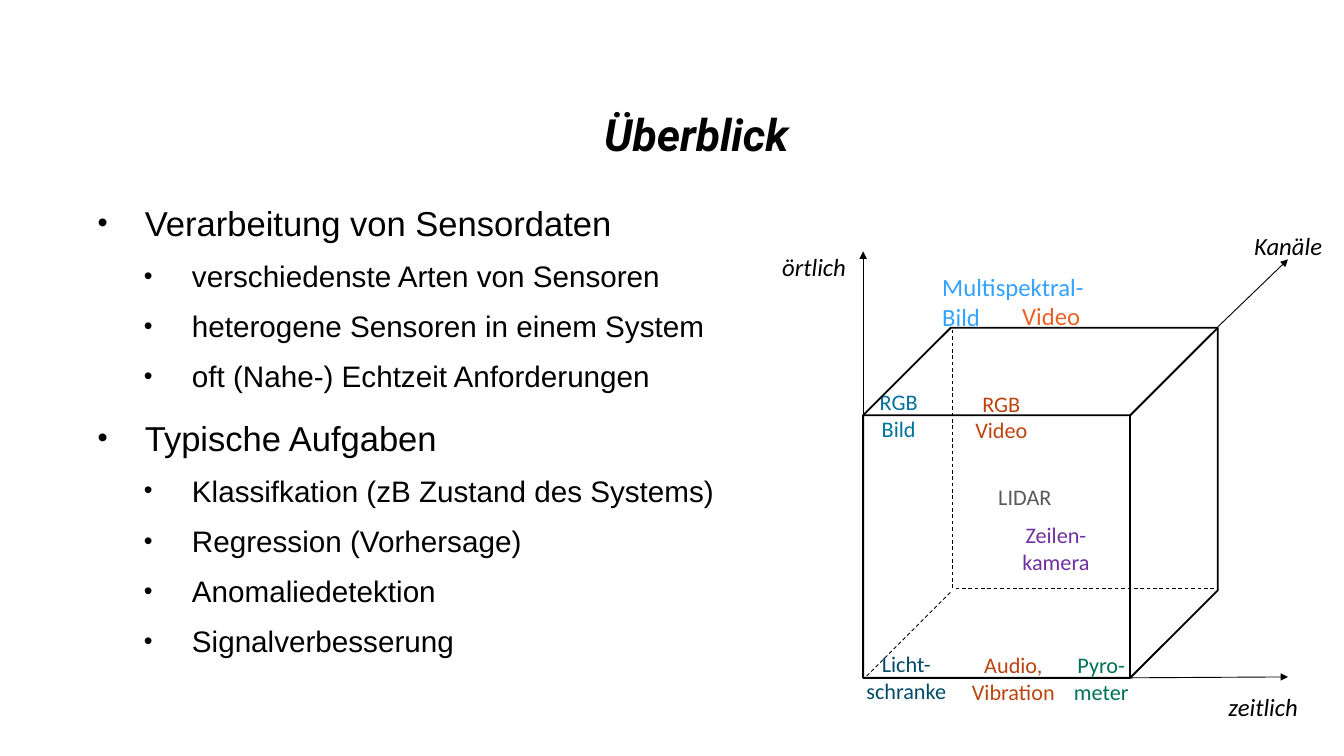
from lxml.etree import SubElement
from pptx import Presentation
from pptx.dml.color import RGBColor
from pptx.enum.dml import MSO_LINE
from pptx.enum.shapes import MSO_CONNECTOR, MSO_SHAPE
from pptx.enum.text import MSO_ANCHOR as ANCHOR, MSO_AUTO_SIZE as AUTO, PP_ALIGN as ALIGN
from pptx.oxml.ns import qn
from pptx.util import Pt

PX = 9144
COLORS = {
    "black": "000000", "image": "00719E", "video": "BC4410", "spectral": "34A2FF",
    "orange": "EC6024", "camera": "7030A0", "pyro": "007154", "barrier": "004B69",
    "lidar": "595959",
}
TOPICS = [
    ("Verarbeitung von Sensordaten", [
        "verschiedenste Arten von Sensoren",
        "heterogene Sensoren in einem System",
        "oft (Nahe-) Echtzeit Anforderungen"]),
    ("Typische Aufgaben", [
        "Klassifkation (zB Zustand des Systems)",
        "Regression (Vorhersage)",
        "Anomaliedetektion",
        "Signalverbesserung"]),
]
AXES = [(400, 515, 581, 514), (502, 120, 581, 44), (103, 288, 103, 35)]
HIDDEN_EDGES = [(107, 513, 203, 417), (207, 414, 499, 414), (203, 414, 203, 123)]
AXIS_NAMES = [
    ("örtlich", 0, 23, 96, 58),
    ("zeitlich", 502, 518, 103, 58),
    ("Kanäle", 531, 0, 101, 58),
]
FACE_SENSORS = [
    ("RGB\nBild", "image", 109, 177, 68, 84),
    ("RGB\nVideo", "video", 216, 179, 85, 84),
]
TOP_SENSORS = [
    ("Multispektral-\nBild", "spectral", 180, 46, 185, 91),
    ("Video", "orange", 270, 78, 90, 58),
]
INNER_SENSORS = [
    ("Zeilen-\nkamera", "camera", 270, 327, 100, 84),
    ("Pyro-\nmeter", "pyro", 328, 473, 86, 84),
    ("Audio,\nVibration", "video", 213, 473, 118, 84),
    ("Licht-\nschranke", "barrier", 94, 472, 115, 84),
    ("LIDAR", "lidar", 243, 284, 84, 54),
]


def rgb(name):
    """Return the named colour."""
    return RGBColor.from_string(COLORS[name])


def add_box(s, x, y, w, h, inset=0, wrap=True):
    """Add an empty text box and return its text frame."""
    tf = s.shapes.add_textbox(x * PX, y * PX, w * PX, h * PX).text_frame
    tf.word_wrap = wrap
    tf.margin_left = tf.margin_top = tf.margin_right = tf.margin_bottom = inset * PX
    return tf


def add_text(p, text, size, font, color="black", bold=False, italic=False):
    """Add the lines of a text as runs parted by line breaks."""
    for i, line in enumerate(text.split("\n")):
        if i:
            p.add_line_break()
        r = p.add_run()
        r.text = line
        r.font.size, r.font.name = Pt(size), font
        r.font.bold, r.font.italic = bold, italic
        r.font.color.rgb = rgb(color)


def add_label(s, text, color, x, y, w, h, size=18, align=ALIGN.CENTER, italic=False):
    """Add a diagram label that does not wrap."""
    tf = add_box(s, x, y, w, h, 12, False)
    tf.auto_size = AUTO.SHAPE_TO_FIT_TEXT
    tf.vertical_anchor = ANCHOR.MIDDLE
    p = tf.paragraphs[0]
    p.alignment = align
    add_text(p, text, size, "Calibri", color, italic=italic)


def add_line(s, x1, y1, x2, y2, arrow=False):
    """Add a thin axis with an arrowhead or a dashed hidden edge."""
    c = s.shapes.add_connector(MSO_CONNECTOR.STRAIGHT, x1 * PX, y1 * PX, x2 * PX, y2 * PX)
    c.line.width = Pt(0.75)
    c.line.color.rgb = rgb("black")
    if arrow:
        SubElement(c.line._get_or_add_ln(), qn("a:tailEnd"), type="triangle")
    else:
        c.line.dash_style = MSO_LINE.DASH
    SubElement(c._element.spPr, qn("a:effectLst"))


def add_bullet(p, text, level):
    """Fill a bulleted paragraph of the given level."""
    pPr = p._p.get_or_add_pPr()
    pPr.set("marL", str((106 if level else 53) * PX))
    pPr.set("indent", str((-54 if level else -53) * PX))
    SubElement(pPr, qn("a:buSzPct"), val="84000")
    SubElement(pPr, qn("a:buFont"), typeface="Arial")
    SubElement(pPr, qn("a:buChar"), char="•")
    p.level = level
    p.line_spacing = 1.2
    add_text(p, text, 24 if level else 28, "Arial")


def add_title(s, x, y, w, h):
    """Place the slide title at the foot of its box."""
    tf = add_box(s, x, y, w, h)
    tf.margin_bottom = 5 * PX
    tf.vertical_anchor = ANCHOR.BOTTOM
    p = tf.paragraphs[0]
    p.alignment = ALIGN.CENTER
    p.line_spacing = 0.9
    add_text(p, "Überblick", 36, "Roboto", bold=True, italic=True)


def add_topics(s, x, y, w, h):
    """Place the two-level topic list."""
    tf = add_box(s, x, y, w, h)
    for i, (topic, items) in enumerate(TOPICS):
        p = tf.add_paragraph() if i else tf.paragraphs[0]
        add_bullet(p, topic, 0)
        if i:
            p.space_before = Pt(12)
        for item in items:
            p = tf.add_paragraph()
            add_bullet(p, item, 1)
            p.space_before = Pt(6)


def add_sensor_cube(s, x, y):
    """Place the sensor cube with its axes and labels."""
    for x1, y1, x2, y2 in AXES:
        add_line(s, x + x1, y + y1, x + x2, y + y2, arrow=True)
    for text, dx, dy, w, h in AXIS_NAMES:
        add_label(s, text, "black", x + dx, y + dy, w, h, 20, ALIGN.LEFT, True)
    for text, color, dx, dy, w, h in FACE_SENSORS:
        add_label(s, text, color, x + dx, y + dy, w, h)
    sp = s.shapes.add_shape(MSO_SHAPE.CUBE, (x + 103) * PX, (y + 121) * PX, 399 * PX, 394 * PX)
    sp.shadow.inherit = False
    sp.fill.background()
    sp.line.color.rgb = rgb("black")
    sp.line.width = Pt(1.5)
    for text, color, dx, dy, w, h in TOP_SENSORS:
        add_label(s, text, color, x + dx, y + dy, w, h, 20, ALIGN.LEFT)
    for text, color, dx, dy, w, h in INNER_SENSORS:
        add_label(s, text, color, x + dx, y + dy, w, h)
    for x1, y1, x2, y2 in HIDDEN_EDGES:
        add_line(s, x + x1, y + y1, x + x2, y + y2)


def main():
    """Build and save the slide."""
    prs = Presentation()
    prs.slide_width, prs.slide_height = 1512 * PX, 851 * PX
    s = prs.slides.add_slide(prs.slide_layouts[6])
    add_title(s, 110, 71, 1347, 115)
    add_topics(s, 110, 218, 1347, 567)
    add_sensor_cube(s, 868, 248)
    prs.save("out.pptx")


if __name__ == "__main__":
    main()
